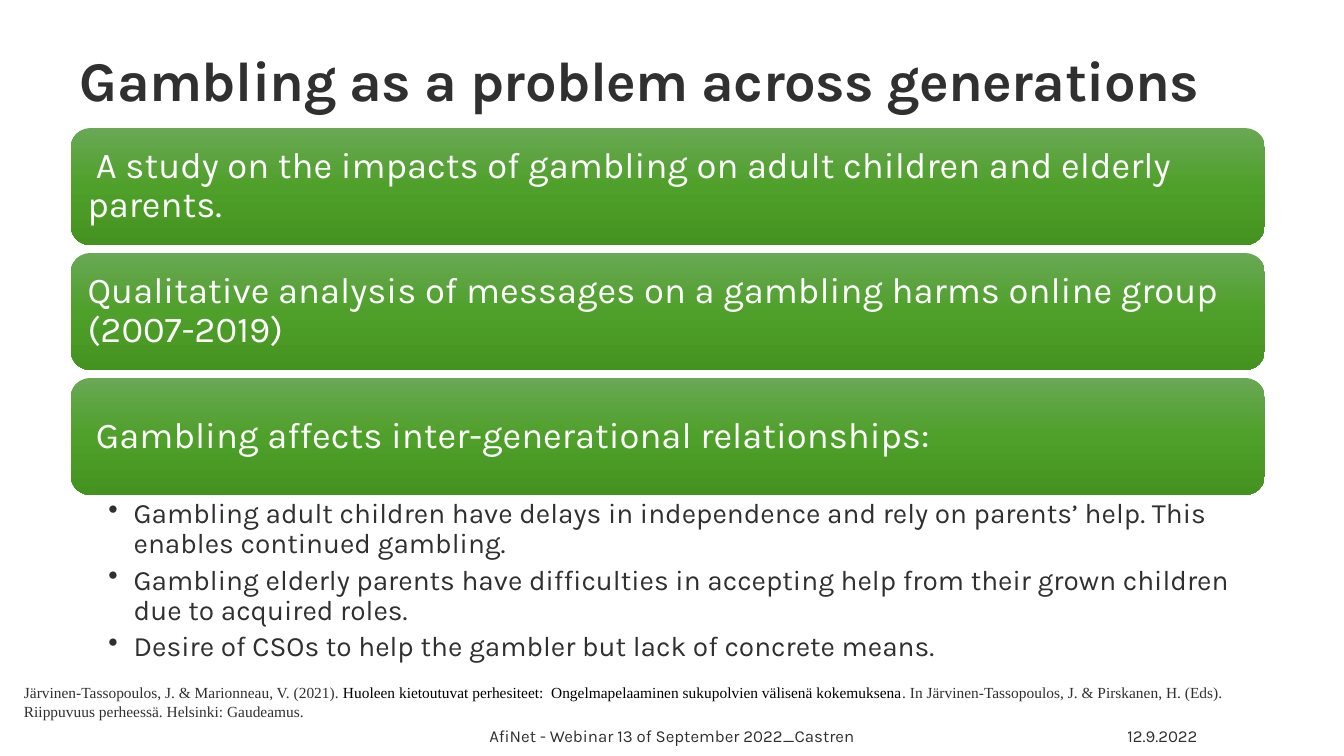
"""Build the slide on gambling as a problem across generations."""
import copy

import pptx
import pptx.dml.color
import pptx.enum.shapes
import pptx.enum.text
import pptx.oxml
import pptx.oxml.ns
import pptx.util

Pt = pptx.util.Pt
ALIGN = pptx.enum.text.PP_ALIGN
ANCHOR = pptx.enum.text.MSO_ANCHOR

DARK = "303030"
WHITE = "FFFFFF"
BLACK = "000000"
GREENS = [(0, "69A854"), (0.5, "4FA02A"), (1, "449320")]

CARD_LEFT, CARD_TOP, CARD_WIDTH, CARD_HEIGHT = 50.5, 91.5, 853, 83.5
CARD_PITCH = 89.25
CARDS = [
    ("A study on the impacts of gambling on adult children and elderly parents.", 6),
    ("Qualitative analysis of messages on a gambling harms online group (2007-2019)", 0),
    ("Gambling affects inter-generational relationships:", 6),
]
FINDINGS = [
    "Gambling adult children have delays in independence and rely on parents’ help. "
    "This enables continued gambling.",
    "Gambling elderly parents have difficulties in accepting help from their grown "
    "children due to acquired roles.",
    "Desire of CSOs to help the gambler but lack of concrete means.",
]
REFERENCE = [
    [
        ("Järvinen-Tassopoulos, J. & Marionneau, V. (2021). ", DARK),
        ("Huoleen kietoutuvat perhesiteet:  Ongelmapelaaminen sukupolvien välisenä "
         "kokemuksena", BLACK),
        (". In Järvinen-Tassopoulos, J. & Pirskanen, H. (Eds).", DARK),
    ],
    [("Riippuvuus perheessä. Helsinki: Gaudeamus.", DARK)],
]


def rgb(value):
    """Return the colour for a hex string."""
    return pptx.dml.color.RGBColor.from_string(value)


def style_font(font, size, color, name="Karla", bold=False):
    """Set the face, size, colour and weight of a font."""
    font.name = name
    font.size = Pt(size)
    font.bold = bold
    font.color.rgb = rgb(color)


def set_frame(frame, anchor, left=7.2, top=3.6, right=7.2, bottom=3.6):
    """Set wrapping, anchor and margins of a text frame."""
    frame.word_wrap = True
    frame.auto_size = pptx.enum.text.MSO_AUTO_SIZE.NONE
    frame.vertical_anchor = anchor
    frame.margin_left, frame.margin_top = Pt(left), Pt(top)
    frame.margin_right, frame.margin_bottom = Pt(right), Pt(bottom)


def set_indent(paragraph, margin, first_line):
    """Set the left margin and first-line indent of a paragraph."""
    properties = paragraph._p.get_or_add_pPr()
    properties.set("marL", str(Pt(margin)))
    properties.set("indent", str(Pt(first_line)))
    return properties


def add_box(slide, left, top, width, height):
    """Add an empty text box."""
    return slide.shapes.add_textbox(Pt(left), Pt(top), Pt(width), Pt(height))


def set_title(slide, text):
    """Place and format the title placeholder."""
    title = slide.shapes.title
    title.left, title.top, title.width, title.height = Pt(57), Pt(14.4), Pt(847), Pt(93.6)
    set_frame(title.text_frame, ANCHOR.MIDDLE, left=0, right=6)
    title.text_frame.text = text
    paragraph = title.text_frame.paragraphs[0]
    paragraph.alignment = ALIGN.LEFT
    paragraph.line_spacing = 0.8
    run = paragraph.runs[0]
    style_font(run.font, 40, DARK, bold=True)
    run.font._element.set("spc", "-40")


def fill_gradient(shape, stops):
    """Fill a shape with a gradient from top to bottom."""
    shape.fill.gradient()
    shape.fill.gradient_angle = 270
    stop_list = shape._element.spPr.find(".//" + pptx.oxml.ns.qn("a:gsLst"))
    while len(stop_list) < len(stops):
        stop_list.append(copy.deepcopy(stop_list[-1]))
    for stop, (position, color) in zip(shape.fill.gradient_stops, stops):
        stop.position = position
        stop.color.rgb = rgb(color)


def add_card(slide, top, text, first_line):
    """Add a green rounded card with white text."""
    card = slide.shapes.add_shape(
        pptx.enum.shapes.MSO_SHAPE.ROUNDED_RECTANGLE,
        Pt(CARD_LEFT), Pt(top), Pt(CARD_WIDTH), Pt(CARD_HEIGHT))
    card.shadow.inherit = False
    card.line.fill.background()
    fill_gradient(card, GREENS)
    set_frame(card.text_frame, ANCHOR.MIDDLE, 8, 8, 8, 8)
    card.text_frame.text = text
    paragraph = card.text_frame.paragraphs[0]
    paragraph.alignment = ALIGN.LEFT
    paragraph.line_spacing = 0.9
    set_indent(paragraph, 0, first_line)
    style_font(paragraph.runs[0].font, 26, WHITE)


def add_bullets(slide, top, items):
    """Add the bulleted findings below the cards."""
    frame = add_box(slide, CARD_LEFT, top, CARD_WIDTH, 129.6).text_frame
    set_frame(frame, ANCHOR.TOP, left=27, top=3, right=14.4, bottom=3)
    frame.text = "\n".join(items)
    for paragraph in frame.paragraphs:
        paragraph.line_spacing = 0.9
        paragraph.space_after = Pt(4.5)
        properties = set_indent(paragraph, 18, -18)
        bullet = pptx.oxml.parse_xml(
            f'<a:buChar {pptx.oxml.ns.nsdecls("a")} char="•"/>')
        properties.append(bullet)
        style_font(paragraph.runs[0].font, 20, DARK)


def add_reference(slide, lines):
    """Add the literature reference."""
    frame = add_box(slide, 10, 484.5, 940, 55).text_frame
    set_frame(frame, ANCHOR.TOP)
    for number, parts in enumerate(lines):
        paragraph = frame.add_paragraph() if number else frame.paragraphs[0]
        for text, color in parts:
            run = paragraph.add_run()
            run.text = text
            style_font(run.font, 11, color, "Times New Roman")


def add_footer(slide, left, width, text, alignment):
    """Add one footer text."""
    frame = add_box(slide, left, 510.5, width, 29.5).text_frame
    set_frame(frame, ANCHOR.MIDDLE)
    frame.text = text
    paragraph = frame.paragraphs[0]
    paragraph.alignment = alignment
    style_font(paragraph.runs[0].font, 12, DARK)


def main():
    """Build and save the presentation."""
    presentation = pptx.Presentation()
    presentation.slide_width, presentation.slide_height = Pt(960), Pt(540)
    slide = presentation.slides.add_slide(presentation.slide_layouts[5])
    set_title(slide, "Gambling as a problem across generations")
    for number, (text, first_line) in enumerate(CARDS):
        add_card(slide, CARD_TOP + number * CARD_PITCH, text, first_line)
    add_bullets(slide, 353.5, FINDINGS)
    add_reference(slide, REFERENCE)
    add_footer(slide, 206.5, 547, "AfiNet - Webinar 13 of September 2022_Castren",
               ALIGN.CENTER)
    add_footer(slide, 777.5, 85, "12.9.2022", ALIGN.RIGHT)
    presentation.save("out.pptx")


if __name__ == "__main__":
    main()
